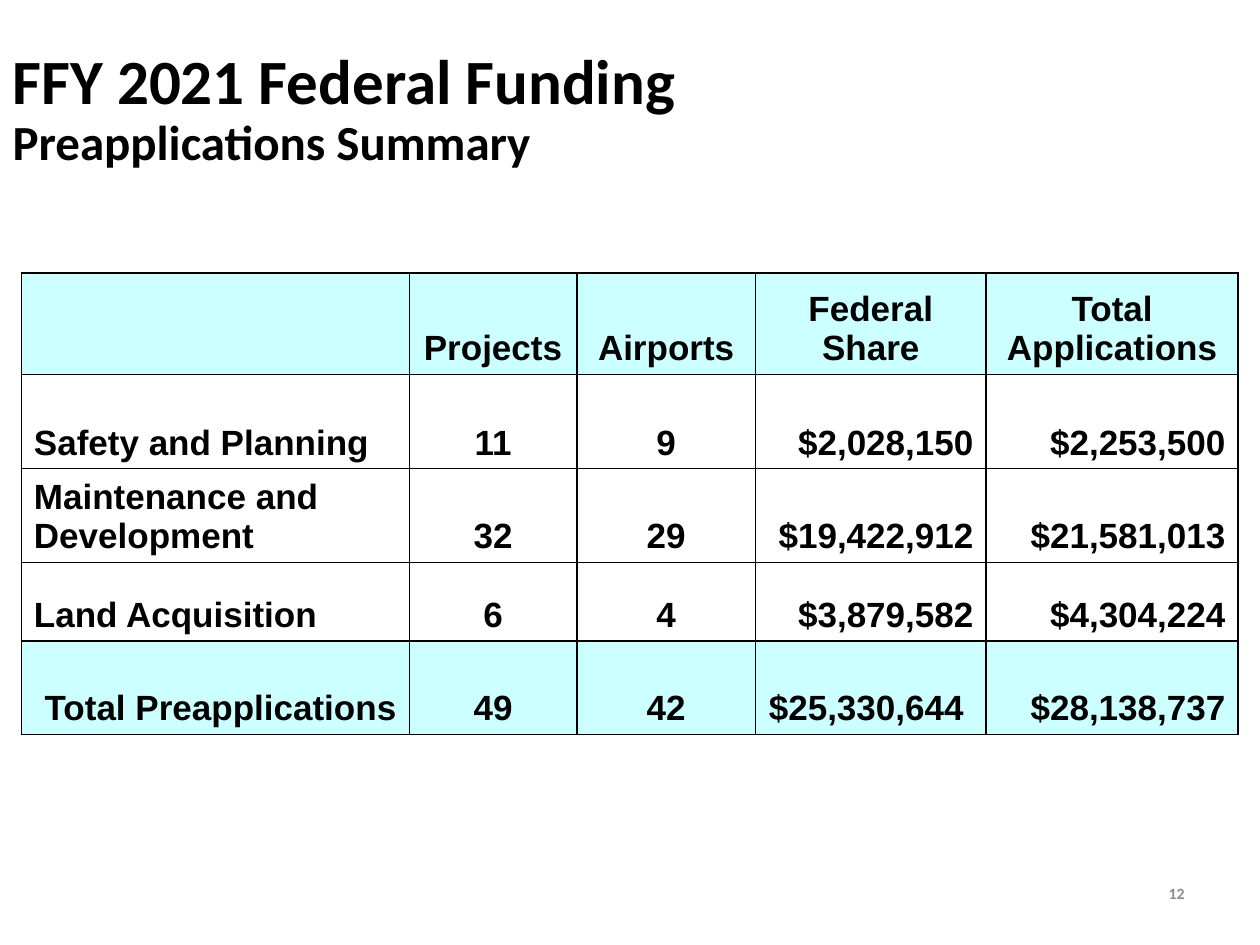
from lxml.etree import SubElement
from pptx import Presentation
from pptx.dml.color import RGBColor
from pptx.enum.text import MSO_ANCHOR, PP_ALIGN
from pptx.oxml.ns import qn
from pptx.util import Cm, Pt

COLORS = {"text": "000000", "band": "CCFFFF", "border": "000000", "number": "8C8C8C"}
LEFT, CENTER, RIGHT = PP_ALIGN.LEFT, PP_ALIGN.CENTER, PP_ALIGN.RIGHT

COLUMN_WIDTHS = [7.82, 3.38, 3.6, 4.65, 5.08]
ROW_HEIGHTS = [2.05, 1.9, 1.89, 1.58, 1.89]
ROWS = [
    ["", "Projects", "Airports", "Federal Share", "Total Applications"],
    ["Safety and Planning", "11", "9", "$2,028,150", "$2,253,500"],
    ["Maintenance and Development", "32", "29", "$19,422,912", "$21,581,013"],
    ["Land Acquisition", "6", "4", "$3,879,582", "$4,304,224"],
    ["Total Preapplications", "49", "42", "$25,330,644 ", "$28,138,737"],
]
HEADER_ROW, TOTAL_ROW = 0, len(ROWS) - 1


class SlideBuilder:
    def __init__(self, slide):
        self.slide = slide
        self.title_font = "Calibri"
        self.table_font = "Arial"

    def format_font(self, font, name, size, color):
        values = {"name": name, "size": Pt(size), "bold": True}
        for attribute, value in values.items():
            setattr(font, attribute, value)
        font.color.rgb = RGBColor.from_string(COLORS[color])

    def place(self, shape, left, top, width, height):
        values = {"left": left, "top": top, "width": width, "height": height}
        for attribute, value in values.items():
            setattr(shape, attribute, Cm(value))

    def add_title(self, heading, subheading):
        title = self.slide.shapes.title
        self.place(title, 0, 0.64, 25.4, 3.17)
        title.text_frame.vertical_anchor = MSO_ANCHOR.MIDDLE
        paragraph = title.text_frame.paragraphs[0]
        paragraph.alignment = LEFT
        paragraph.line_spacing = 0.9
        run = paragraph.add_run()
        run.text = heading
        self.format_font(run.font, self.title_font, 36, "text")
        paragraph.add_line_break()
        run = paragraph.add_run()
        run.text = subheading
        self.format_font(run.font, self.title_font, 28, "text")

    def add_borders(self, cell):
        properties = cell._tc.get_or_add_tcPr()
        for side in ("a:lnL", "a:lnR", "a:lnT", "a:lnB"):
            line = SubElement(properties, qn(side), w=str(Pt(1)))
            fill = SubElement(line, qn("a:solidFill"))
            SubElement(fill, qn("a:srgbClr"), val=COLORS["border"])

    def fill_cell(self, cell, text, alignment, banded):
        self.add_borders(cell)
        if banded:
            cell.fill.solid()
            cell.fill.fore_color.rgb = RGBColor.from_string(COLORS["band"])
        else:
            cell.fill.background()
        cell.vertical_anchor = MSO_ANCHOR.BOTTOM
        cell.text = text
        paragraph = cell.text_frame.paragraphs[0]
        paragraph.alignment = alignment
        for run in paragraph.runs:
            self.format_font(run.font, self.table_font, 20, "text")

    def add_table(self, left, top):
        table = self.slide.shapes.add_table(
            len(ROWS), len(COLUMN_WIDTHS), Cm(left), Cm(top),
            Cm(sum(COLUMN_WIDTHS)), Cm(sum(ROW_HEIGHTS))).table
        for column, width in zip(table.columns, COLUMN_WIDTHS):
            column.width = Cm(width)
        for row, height in zip(table.rows, ROW_HEIGHTS):
            row.height = Cm(height)
        for row_index, texts in enumerate(ROWS):
            banded = row_index in (HEADER_ROW, TOTAL_ROW)
            label = RIGHT if row_index == TOTAL_ROW else LEFT
            amount = CENTER if row_index == HEADER_ROW else RIGHT
            alignments = [label, CENTER, CENTER, amount, amount]
            for column_index, (text, alignment) in enumerate(zip(texts, alignments)):
                self.fill_cell(table.cell(row_index, column_index), text, alignment, banded)

    def add_slide_number(self, number):
        box = self.slide.shapes.add_textbox(Cm(18.21), Cm(17.35), Cm(5.92), Cm(1.32))
        frame = box.text_frame
        frame.word_wrap = True
        frame.vertical_anchor = MSO_ANCHOR.MIDDLE
        paragraph = frame.paragraphs[0]
        paragraph.alignment = RIGHT
        run = paragraph.add_run()
        run.text = number
        self.format_font(run.font, self.title_font, 9, "number")


def main():
    presentation = Presentation()
    presentation.slide_width, presentation.slide_height = Cm(25.4), Cm(19.05)
    title_only = presentation.slide_layouts[5]
    builder = SlideBuilder(presentation.slides.add_slide(title_only))
    builder.add_title("FFY 2021 Federal Funding", "Preapplications Summary")
    builder.add_table(0.43, 5.5)
    builder.add_slide_number("12")
    presentation.save("out.pptx")


if __name__ == "__main__":
    main()
